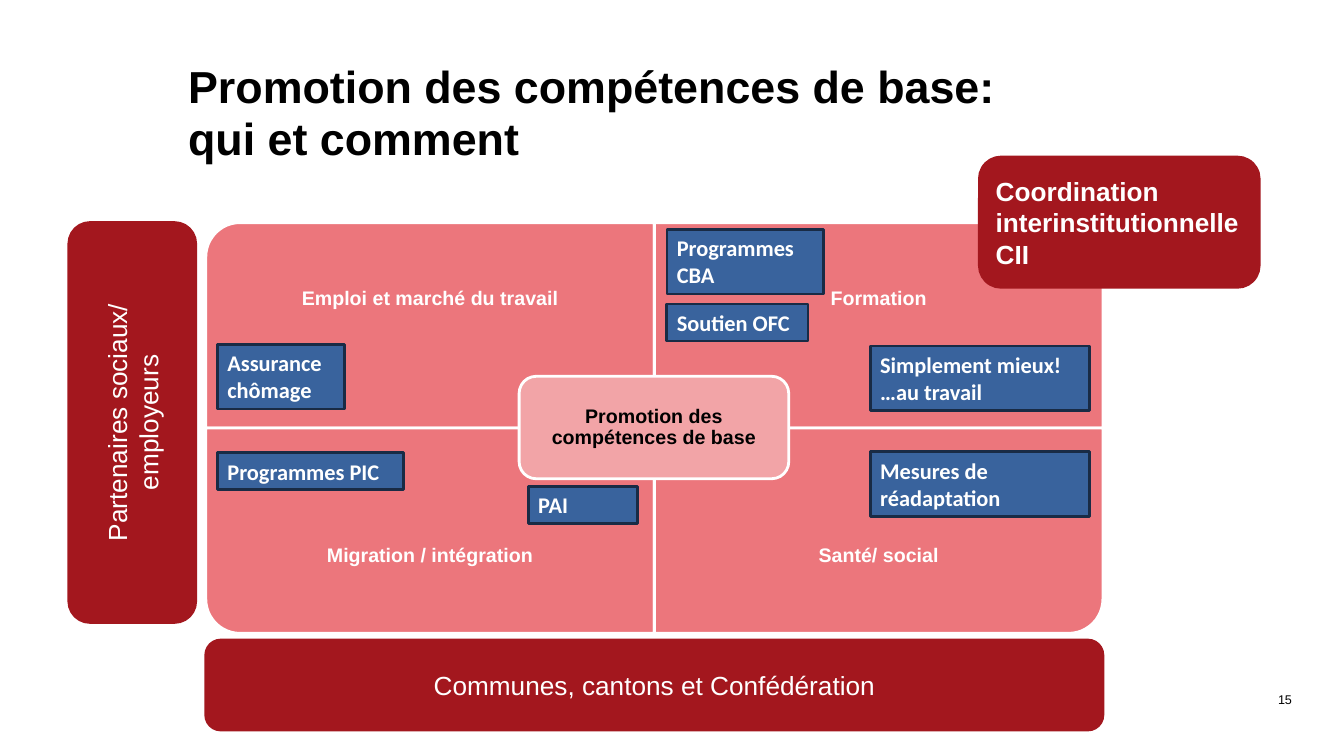
from dataclasses import dataclass

from pptx import Presentation
from pptx import util as u
from pptx.dml.color import RGBColor
from pptx.enum import shapes, text

COLORS = {
    "black": "000000", "white": "FFFFFF", "red": "A3171E",
    "rose": "EC767C", "pale": "F2A4A7", "blue": "39639D", "navy": "192B45",
}

# Slide and its grid of 160 columns by 90 rows
presentation = Presentation()
presentation.slide_width, presentation.slide_height = u.Inches(40 / 3), u.Inches(7.5)
COLUMN = presentation.slide_width / 160
ROW = presentation.slide_height / 90
slide = presentation.slides.add_slide(presentation.slide_layouts[5])

ROUNDED = shapes.MSO_SHAPE.ROUNDED_RECTANGLE
CORNER = shapes.MSO_SHAPE.ROUND_1_RECTANGLE
PLAIN = shapes.MSO_SHAPE.RECTANGLE
LEFT, CENTER, RIGHT = text.PP_ALIGN.LEFT, text.PP_ALIGN.CENTER, text.PP_ALIGN.RIGHT
TOP, MIDDLE = text.MSO_ANCHOR.TOP, text.MSO_ANCHOR.MIDDLE


@dataclass(frozen=True)
class Area:
    """Place on the grid, in columns and rows."""
    column: float
    row: float
    columns: float
    rows: float

    def box(self) -> tuple[u.Emu, ...]:
        return (u.Emu(round(self.column * COLUMN)), u.Emu(round(self.row * ROW)),
                u.Emu(round(self.columns * COLUMN)), u.Emu(round(self.rows * ROW)))


@dataclass(frozen=True)
class Style:
    size: float
    color: str = "white"
    bold: bool = False
    align: text.PP_ALIGN = CENTER
    anchor: text.MSO_ANCHOR = MIDDLE
    spacing: float | u.Length | None = None
    font: str = "Arial"


@dataclass(frozen=True)
class Block:
    words: str
    area: Area
    style: Style


@dataclass(frozen=True)
class Quadrant:
    words: str
    column: int
    row: int
    rotation: int


TITLE = Style(32, "black", True, LEFT, TOP, u.Pt(37.3))
NUMBER = Style(9, "black", False, RIGHT, TOP, u.Pt(12))
FIELD = Style(14, bold=True, spacing=0.9)
CORE = Style(14, "black", True, spacing=0.9)
BAR = Style(18.7)
COORDINATION = Style(18.7, bold=True, align=LEFT)
TAG = Style(16, bold=True, align=LEFT, anchor=TOP, font="Calibri")


def write(shape, words: str, style: Style) -> None:
    frame = shape.text_frame
    frame.text = words
    frame.word_wrap = True
    frame.auto_size = text.MSO_AUTO_SIZE.NONE
    frame.vertical_anchor = style.anchor
    for paragraph in frame.paragraphs:
        paragraph.alignment = style.align
        paragraph.line_spacing = style.spacing
        for run in paragraph.runs:
            run.font.name = style.font
            run.font.size = u.Pt(style.size)
            run.font.bold = style.bold
            run.font.color.rgb = RGBColor.from_string(COLORS[style.color])


def add_box(kind: shapes.MSO_SHAPE, area: Area, fill: str, line: str):
    shape = slide.shapes.add_shape(kind, *area.box())
    shape.shadow.inherit = False
    shape.fill.solid()
    shape.fill.fore_color.rgb = RGBColor.from_string(COLORS[fill])
    shape.line.color.rgb = RGBColor.from_string(COLORS[line])
    shape.line.width = u.Pt(2)
    return shape


def add_label(block: Block) -> None:
    write(slide.shapes.add_textbox(*block.area.box()), block.words, block.style)


def add_quadrant(quadrant: Quadrant) -> None:
    left = MATRIX.column + quadrant.column * MATRIX.columns / 2
    top = MATRIX.row + quadrant.row * MATRIX.rows / 2
    width, height = MATRIX.columns / 2, MATRIX.rows / 2
    area = Area(left, top, width, height)
    if quadrant.rotation % 180:  # a quarter turn swaps the sides around the centre
        area = Area(left + (width - height) / 2, top + (height - width) / 2, height, width)
    add_box(CORNER, area, "rose", "white").rotation = quadrant.rotation
    label_rows = height * 0.75
    label_top = top + quadrant.row * (height - label_rows)
    add_label(Block(quadrant.words, Area(left, label_top, width, label_rows), FIELD))


# Title and slide number
title = slide.shapes.title
title.left, title.top, title.width, title.height = Area(21.2, 6.6, 110, 9.4).box()
write(title, "Promotion des compétences de base:\vqui et comment", TITLE)
add_label(Block("15", Area(115.9, 81.6, 39.1, 4.8), NUMBER))

# Four fields of action around the shared core
MATRIX = Area(24.5, 26.5, 106.8, 48.9)
QUADRANTS = [
    Quadrant("Emploi et marché du travail", 0, 0, 270),
    Quadrant("Formation", 1, 0, 0),
    Quadrant("Migration / intégration", 0, 1, 180),
    Quadrant("Santé/ social", 1, 1, 90),
]
for quadrant in QUADRANTS:
    add_quadrant(quadrant)

core = add_box(ROUNDED, Area(61.8, 44.8, 32.1, 12.2), "pale", "white")
write(core, "Promotion des compétences de base", CORE)

# Red bars for the partners; the tall one reads upwards
BARS = [
    Block("Partenaires sociaux/\nemployeurs", Area(8.2, 26.5, 15.1, 47.6), BAR),
    Block("Communes, cantons et Confédération", Area(24.5, 76.2, 106.8, 10.7), BAR),
    Block("Coordination interinstitutionnelle\nCII", Area(116.6, 18.7, 33.3, 15.5), COORDINATION),
]
for bar in BARS:
    shape = add_box(ROUNDED, bar.area, "red", "red")
    write(shape, bar.words, bar.style)
    if bar.area.rows > bar.area.columns:
        shape.text_frame._txBody.bodyPr.set("vert", "vert270")

# Blue programme tags, one or two lines high
ONE_LINE, TWO_LINES = 4.4, 7.7
TAGS = [
    Block("Assurance chômage", Area(25.9, 41, 15.1, TWO_LINES), TAG),
    Block("Programmes CBA", Area(79.4, 27.3, 18.6, TWO_LINES), TAG),
    Block("Programmes PIC", Area(25.9, 53.9, 22.1, ONE_LINE), TAG),
    Block("Mesures de réadaptation", Area(103.6, 53.8, 26.1, TWO_LINES), TAG),
    Block("Simplement mieux!\n…au travail", Area(103.6, 41.2, 26.1, TWO_LINES), TAG),
    Block("Soutien OFC", Area(79.4, 36.2, 16.8, ONE_LINE), TAG),
    Block("PAI", Area(62.9, 57.9, 13, ONE_LINE), TAG),
]
for tag in TAGS:
    shape = add_box(PLAIN, tag.area, "blue", "navy")
    write(shape, tag.words, tag.style)
    shape.text_frame.auto_size = text.MSO_AUTO_SIZE.SHAPE_TO_FIT_TEXT

presentation.save("out.pptx")
